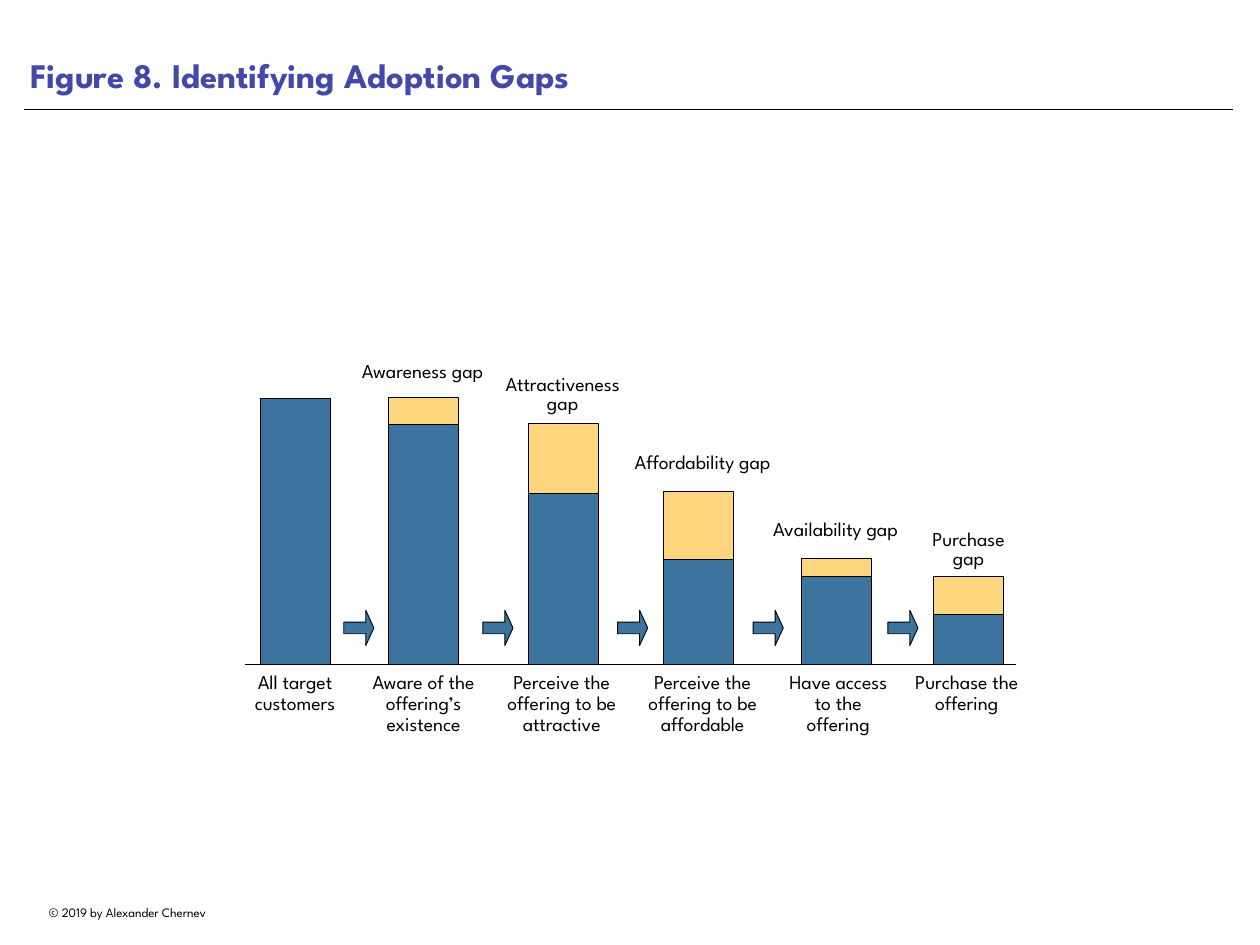
from pptx import Presentation
from pptx.dml.color import RGBColor
from pptx.enum.shapes import MSO_CONNECTOR, MSO_SHAPE
from pptx.enum.text import MSO_ANCHOR, MSO_AUTO_SIZE, PP_ALIGN
from pptx.oxml.ns import qn
from pptx.util import Inches, Pt
from lxml import etree

RECTANGLE = MSO_SHAPE.RECTANGLE
RIGHT_ARROW = MSO_SHAPE.RIGHT_ARROW
STRAIGHT = MSO_CONNECTOR.STRAIGHT
TOP, MIDDLE, BOTTOM = MSO_ANCHOR.TOP, MSO_ANCHOR.MIDDLE, MSO_ANCHOR.BOTTOM
LEFT, CENTER = PP_ALIGN.LEFT, PP_ALIGN.CENTER
NO_AUTOFIT = MSO_AUTO_SIZE.NONE

BASELINE = 7.5
BAR_WIDTH = 0.79
LABEL_TOP = 7.59
ARROW_TOP = 6.89

# Bar left, bar top, label, label left, label width
STAGES = [
    (2.94, 4.5, "All target customers", 2.75, 1.16),
    (4.38, 4.79, "Aware of the offering’s existence", 4.07, 1.42),
    (5.96, 5.57, "Perceive the offering to be attractive", 5.54, 1.6),
    (7.49, 6.32, "Perceive the offering to be affordable", 7.11, 1.64),
    (9.04, 6.51, "Have access to the offering", 8.82, 1.28),
    (10.53, 6.94, "Purchase the offering", 10.25, 1.32),
]

# Gap top, label, label left, label top, label width (second stage onwards)
GAPS = [
    (4.49, "Awareness gap", 3.97, 3.89, 1.6),
    (4.78, "Attractiveness gap", 5.55, 4.15, 1.6),
    (5.55, "Affordability gap", 7.13, 4.92, 1.6),
    (6.31, "Availability gap", 8.63, 5.68, 1.6),
    (6.51, "Purchase\vgap", 10.29, 5.9, 1.28),
]

ARROW_LEFTS = [3.88, 5.45, 6.97, 8.5, 10.02]


def color(value):
    return RGBColor.from_string(value)


class FigurePage:
    """Holds the style and the current slide."""

    font = "League Spartan"
    ink = "000000"
    heading = "4349AA"
    bar_fill = "3D749D"
    gap_fill = "FFD67E"

    def __init__(self, deck):
        self.page = deck.slides.add_slide(deck.slide_layouts[5])

    def set_text(self, box, text, size, ink=ink, bold=False, anchor=TOP,
                 align=CENTER, spacing=1.0, inset=0, wrap=True):
        frame = box.text_frame
        margin = Inches(inset)
        frame_format = {
            "word_wrap": wrap, "auto_size": NO_AUTOFIT, "vertical_anchor": anchor,
            "margin_left": margin, "margin_right": margin,
            "margin_top": margin, "margin_bottom": margin,
        }
        for name, value in frame_format.items():
            setattr(frame, name, value)
        frame.text = text
        para = frame.paragraphs[0]
        para.alignment = align
        para.line_spacing = spacing
        for span in para.runs:
            for name, value in {"name": self.font, "size": Pt(size), "bold": bold}.items():
                setattr(span.font, name, value)
            span.font.color.rgb = color(ink)

    def title(self, text, left, top, width, height):
        box = self.page.shapes.title
        place = {"left": left, "top": top, "width": width, "height": height}
        for name, value in place.items():
            setattr(box, name, Inches(value))
        self.set_text(box, text, 28, self.heading, True, BOTTOM, LEFT, inset=0.07)

    def text(self, text, left, top, width, height, size=16, **style):
        box = self.page.shapes.add_textbox(
            Inches(left), Inches(top), Inches(width), Inches(height))
        self.set_text(box, text, size, **style)

    def shape(self, kind, left, top, width, height, fill):
        shape = self.page.shapes.add_shape(
            kind, Inches(left), Inches(top), Inches(width), Inches(height))
        shape.shadow.inherit = False
        shape.fill.solid()
        shape.fill.fore_color.rgb = color(fill)
        shape.line.color.rgb = color(self.ink)
        shape.line.width = Pt(0.75)
        return shape

    def bar(self, left, top, bottom, fill):
        self.shape(RECTANGLE, left, top, BAR_WIDTH, bottom - top, fill)

    def arrow(self, left):
        arrow = self.shape(RIGHT_ARROW, left, ARROW_TOP, 0.34, 0.4, self.bar_fill)
        arrow.adjustments[0] = 0.33
        arrow.adjustments[1] = 0.27

    def rule(self, left, right, height, weight):
        line = self.page.shapes.add_connector(
            STRAIGHT, Inches(left), Inches(height), Inches(right), Inches(height))
        line.line.color.rgb = color(self.ink)
        line.line.width = Pt(weight)
        etree.SubElement(line._element.spPr, qn("a:effectLst"))


def main():
    deck = Presentation()
    deck.slide_width = Inches(14.22)
    deck.slide_height = Inches(10.67)
    figure = FigurePage(deck)

    # Heading and footer
    figure.title("Figure 8. Identifying Adoption Gaps", 0.27, 0, 13.64, 1.15)
    figure.rule(0.27, 13.92, 1.24, 0.5)
    figure.text("© 2019 by Alexander Chernev", 0.27, 10.16, 2.34, 0.28,
                size=10.5, anchor=MIDDLE, wrap=False)

    # Adoption gaps on top of the later stages
    for (left, bar_top, *_), gap in zip(STAGES[1:], GAPS):
        gap_top, label, label_left, label_top, label_width = gap
        figure.bar(left, gap_top, bar_top, figure.gap_fill)
        figure.text(label, label_left, label_top, label_width, 0.63,
                    anchor=MIDDLE, spacing=0.8)

    # Stage bars with labels below the baseline
    for left, bar_top, label, label_left, label_width in STAGES:
        figure.bar(left, bar_top, BASELINE, figure.bar_fill)
        figure.text(label, label_left, LABEL_TOP, label_width, 0.94, spacing=0.9)

    # Arrows between stages, and the baseline
    for left in ARROW_LEFTS:
        figure.arrow(left)
    figure.rule(2.76, 11.47, BASELINE, 1)

    deck.save("out.pptx")


if __name__ == "__main__":
    main()
